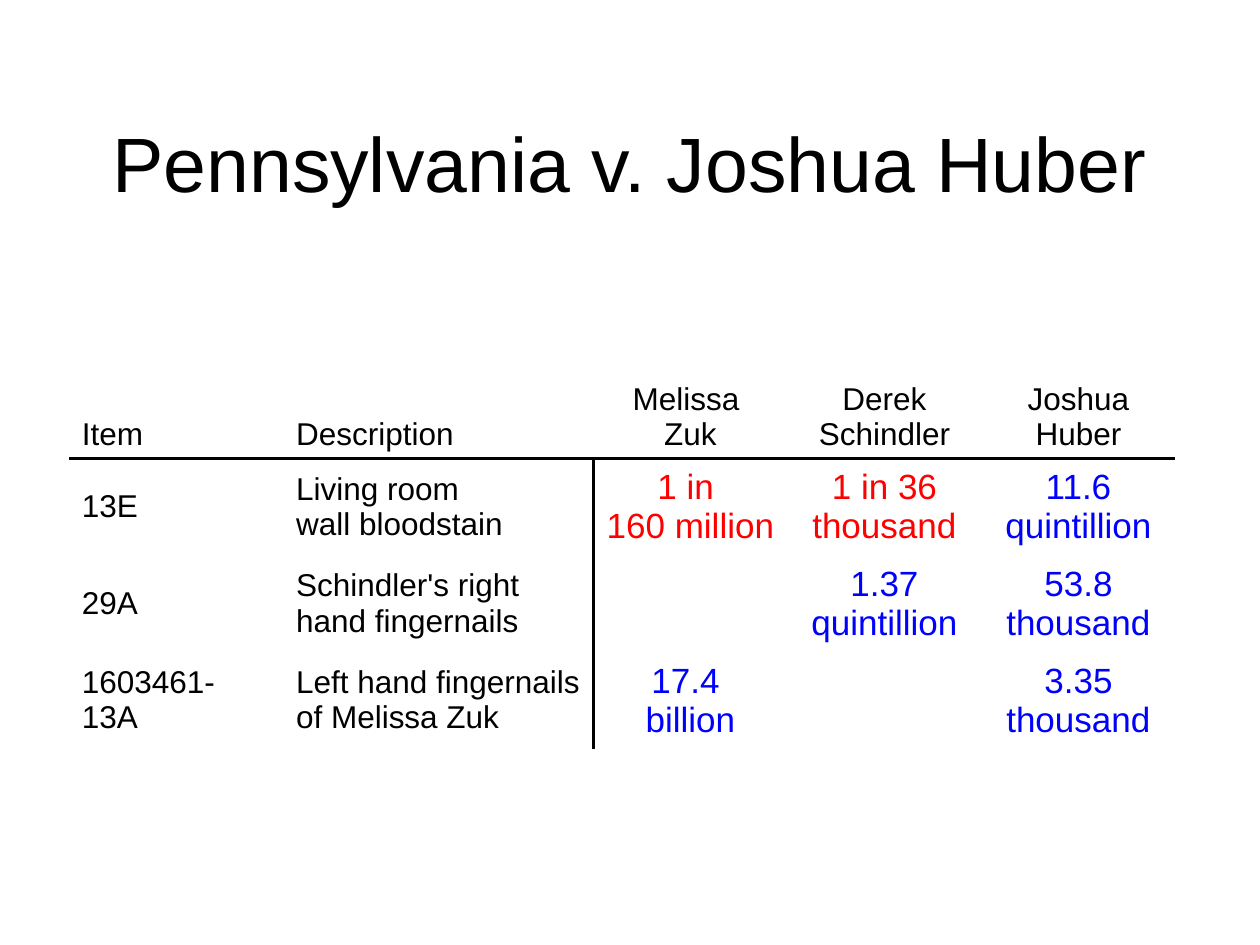
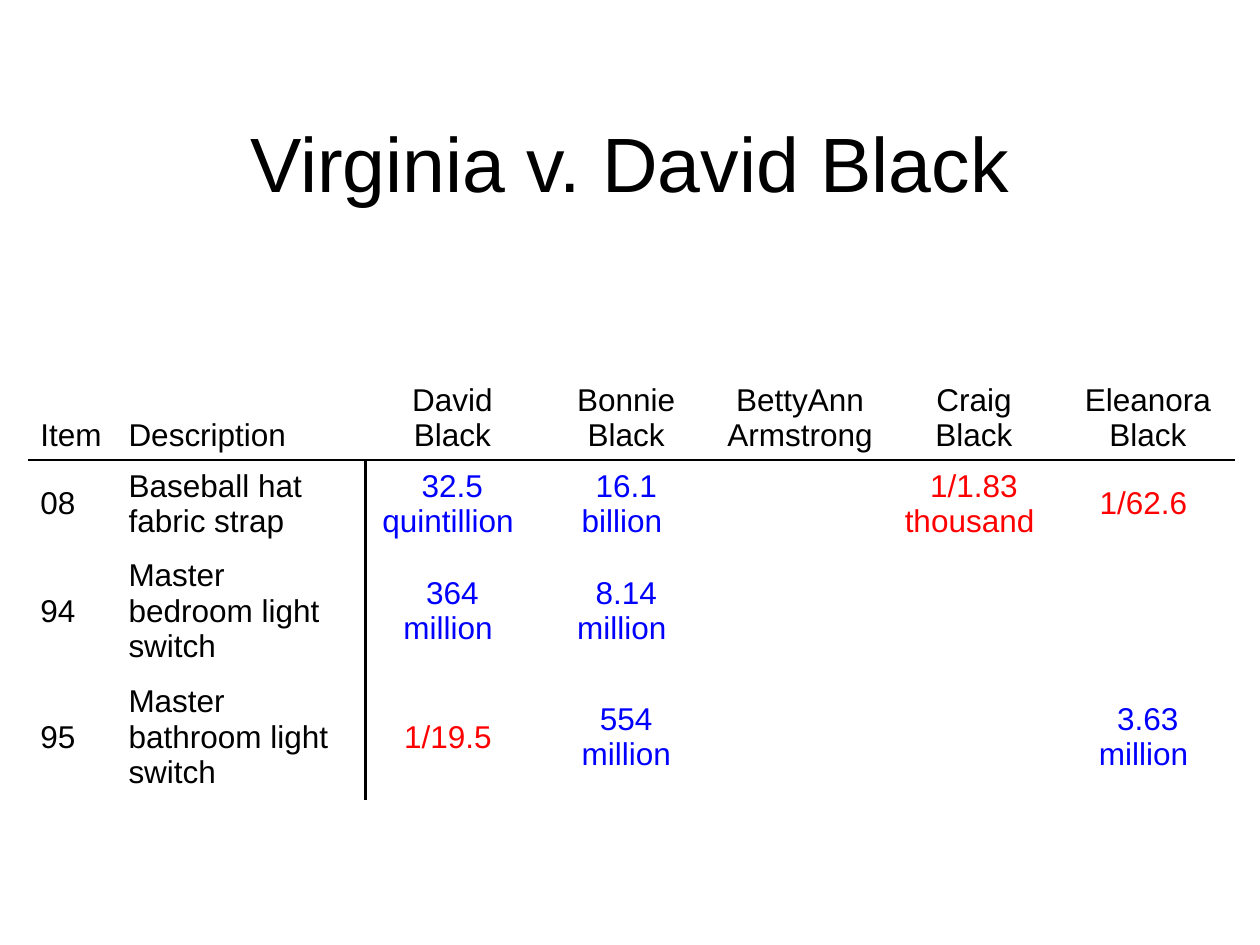
from lxml import etree
from pptx import Presentation
from pptx import util as u
from pptx.dml.color import RGBColor
from pptx.enum import text as t
from pptx.oxml import ns

BLACK, RED, BLUE, WHITE = "000000", "FF0000", "0000FF", "FFFFFF"
NO_GRID_STYLE = "{2D5ABB26-0587-4C30-8999-92F81FD0307C}"
LABEL_COLUMNS = 2
hex_color = RGBColor.from_string


def write(frame, content, size=18, color=BLACK, align=t.PP_ALIGN.LEFT):
    frame.word_wrap = True
    for index, line in enumerate(content.split("\n")):
        paragraph = frame.add_paragraph() if index else frame.paragraphs[0]
        paragraph.alignment = align
        paragraph.font.size = u.Pt(size)
        run = paragraph.add_run()
        run.text = line
        run.font.name = "Arial"
        run.font.size = u.Pt(size)
        run.font.color.rgb = hex_color(color)


def add_border(cell, side, color=BLACK, width=1.5):
    line = etree.Element(ns.qn(f"a:ln{side}"), w=str(u.Pt(width)))
    fill = etree.SubElement(line, ns.qn("a:solidFill"))
    etree.SubElement(fill, ns.qn("a:srgbClr"), val=color)
    cell._tc.get_or_add_tcPr().insert(0, line)


cases = [
    {
        "title": "Pennsylvania v. Joshua Huber",
        "left": 0.55, "top": 2.42, "value_size": 20,
        "columns": [1.7, 2.46] + [1.54] * 3,
        "rows": [1.22] + [0.72] * 3,
        "cells": [
            ["Item", "Description", "Melissa \nZuk", "Derek Schindler", "Joshua Huber"],
            ["13E", "Living room\nwall bloodstain", "1 in \n160 million", "1 in 36 thousand", "11.6 quintillion"],
            ["29A", "Schindler's right\nhand fingernails", "", "1.37 quintillion", "53.8 thousand"],
            ["1603461-13A", "Left hand fingernails\nof Melissa Zuk", "17.4 \nbillion", "", "3.35 thousand"],
        ],
    },
    {
        "title": "Virginia v. David Black",
        "left": 0.22, "top": 2.35, "value_size": 18,
        "columns": [0.7, 1.98] + [1.38] * 5,
        "rows": [1.3, 0.7, 1, 1],
        "cells": [
            ["Item", "Description", "David Black", "Bonnie Black", "BettyAnn Armstrong", "Craig Black", "Eleanora Black"],
            ["08", "Baseball hat fabric strap", "32.5 quintillion ", "16.1 billion ", "", "1/1.83 thousand ", "1/62.6 "],
            ["94", "Master bedroom light switch", "364 million ", "8.14 million ", "", "", ""],
            ["95", "Master bathroom light switch", "1/19.5 ", "554 million", "", "", "3.63 million "],
        ],
    },
]

presentation = Presentation()
presentation.slide_width = u.Inches(10)
presentation.slide_height = u.Inches(7.5)
blank_layout = presentation.slide_layouts[6]

for case in cases:
    slide = presentation.slides.add_slide(blank_layout)
    slide.background.fill.solid()
    slide.background.fill.fore_color.rgb = hex_color(WHITE)

    title = slide.shapes.add_textbox(u.Inches(0.75), u.Inches(0.66), u.Inches(8.5), u.Inches(1.25))
    title.text_frame.vertical_anchor = t.MSO_ANCHOR.MIDDLE
    write(title.text_frame, case["title"], size=44, align=t.PP_ALIGN.CENTER)

    columns, rows = case["columns"], case["rows"]
    table = slide.shapes.add_table(
        len(rows), len(columns), u.Inches(case["left"]), u.Inches(case["top"]),
        u.Inches(sum(columns)), u.Inches(sum(rows))).table
    table.first_row = table.horz_banding = False
    table._tbl.tblPr.find(ns.qn("a:tableStyleId")).text = NO_GRID_STYLE
    for column, width in zip(table.columns, columns):
        column.width = u.Inches(width)
    for row, height in zip(table.rows, rows):
        row.height = u.Inches(height)

    for row_index, row_texts in enumerate(case["cells"]):
        for column_index, content in enumerate(row_texts):
            cell = table.cell(row_index, column_index)
            cell.fill.background()
            is_header = row_index == 0
            is_label = column_index < LABEL_COLUMNS
            cell.vertical_anchor = t.MSO_ANCHOR.BOTTOM if is_header else t.MSO_ANCHOR.MIDDLE
            if is_header:
                add_border(cell, "B")
            elif column_index == LABEL_COLUMNS - 1:
                add_border(cell, "R")
            if not content:
                continue
            align = t.PP_ALIGN.LEFT if is_label else t.PP_ALIGN.CENTER
            if is_header or is_label:
                write(cell.text_frame, content, align=align)
            else:
                color = RED if content.startswith(("1/", "1 in")) else BLUE
                write(cell.text_frame, content, size=case["value_size"], color=color, align=align)

presentation.save("out.pptx")
